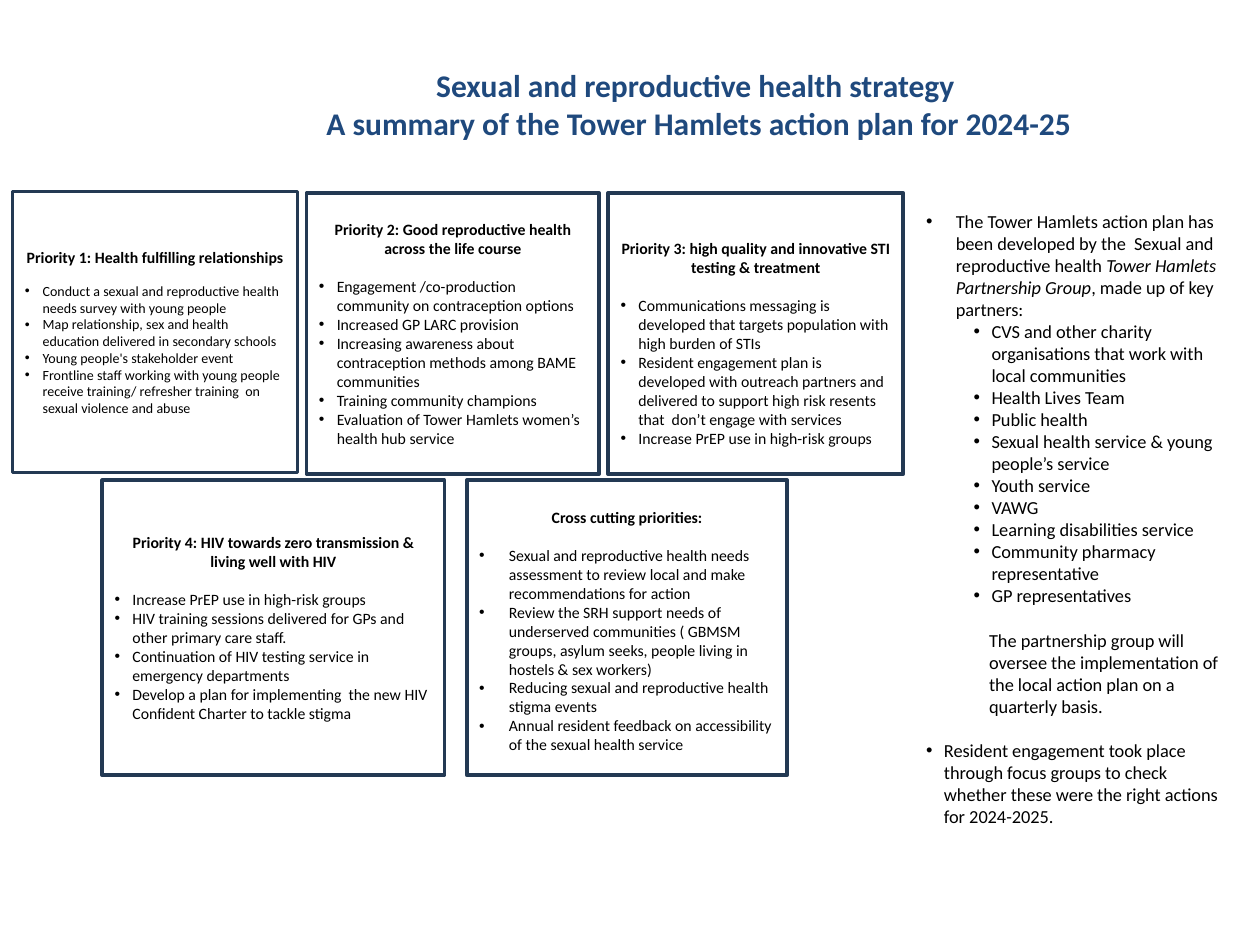
from lxml import etree
from pptx import Presentation
from pptx import util as u
from pptx.dml import color
from pptx.enum import shapes, text
from pptx.oxml import ns

COLORS = {"title": "1F497D", "border": "233953", "text": "000000"}
FONT = "Calibri"
INSET = 0.13

PRIORITIES = [
    dict(box=(0.25, 3.86, 5.75, 5.67), size=8, gap=9,
         heading="Priority 1: Health fulfilling relationships",
         actions=[
             "Conduct a sexual and reproductive health needs survey with young people",
             "Map relationship, sex and health education delivered in secondary schools",
             "Young people's stakeholder event",
             "Frontline staff working with young people receive training/ refresher training  on sexual violence and abuse",
         ]),
    dict(box=(6.18, 3.89, 5.9, 5.67),
         heading="Priority 2: Good reproductive health across the life course",
         actions=[
             "Engagement /co-production community on contraception options",
             "Increased GP LARC provision",
             "Increasing awareness about contraception methods among BAME communities",
             "Training community champions",
             "Evaluation of Tower Hamlets women’s health hub service",
         ]),
    dict(box=(12.26, 3.89, 5.95, 5.67), drop=0.39,
         heading="Priority 3: high quality and innovative STI testing & treatment",
         actions=[
             "Communications messaging is developed that targets population with high burden of STIs",
             "Resident engagement plan is developed with outreach partners and delivered to support high risk resents that  don’t engage with services",
             "Increase PrEP use in high-risk groups",
         ]),
    dict(box=(2.06, 9.68, 6.9, 5.95),
         heading="Priority 4: HIV towards zero transmission & living well with HIV",
         actions=[
             "Increase PrEP use in high-risk groups",
             "HIV training sessions delivered for GPs and other primary care staff.",
             "Continuation of HIV testing service in emergency departments",
             "Develop a plan for implementing  the new HIV Confident Charter to tackle stigma",
         ]),
    dict(box=(9.41, 9.68, 6.46, 5.95), drop=0.12, indent=0.6,
         heading="Cross cutting priorities:",
         actions=[
             "Sexual and reproductive health needs assessment to review local and make recommendations for action",
             "Review the SRH support needs of underserved communities ( GBMSM groups, asylum seeks, people living in hostels & sex workers)",
             "Reducing sexual and reproductive health stigma events",
             "Annual resident feedback on accessibility of the sexual health service",
         ]),
]

PARTNERS = [
    "CVS and other charity organisations that work with local communities",
    "Health Lives Team",
    "Public health",
    "Sexual health service & young people’s service",
    "Youth service",
    "VAWG",
    "Learning disabilities service",
    "Community pharmacy representative",
    "GP representatives",
]


def rgb(name):
    return color.RGBColor.from_string(COLORS[name])


def format_runs(p, size, name="text", bold=False):
    for r in p.runs:
        r.font.name = FONT
        r.font.size = u.Pt(size)
        r.font.bold = bold
        r.font.color.rgb = rgb(name)


def set_indent(p, left, hanging=0.0):
    pPr = p._p.get_or_add_pPr()
    pPr.set("marL", str(u.Cm(left)))
    pPr.set("indent", str(-u.Cm(hanging)))
    if hanging:
        etree.SubElement(pPr, ns.qn("a:buFont")).set("typeface", "Arial")
        etree.SubElement(pPr, ns.qn("a:buChar")).set("char", "•")


def add_paragraph(tf, content, size, left=0.0, hanging=0.0, level=0, before=0):
    p = tf.add_paragraph() if tf.text else tf.paragraphs[0]
    p.text = content
    p.level = level
    p.alignment = text.PP_ALIGN.LEFT
    set_indent(p, left, hanging)
    if before:
        p.space_before = u.Pt(before)
    format_runs(p, size)
    return p


def add_text_box(s, left, top, width, height):
    tf = s.shapes.add_textbox(u.Cm(left), u.Cm(top), u.Cm(width), u.Cm(height)).text_frame
    tf.word_wrap = True
    return tf


def add_title(s):
    tf = add_text_box(s, 5.69, 0.94, 16.81, 2.31)
    tf.vertical_anchor = text.MSO_ANCHOR.MIDDLE
    p = tf.paragraphs[0]
    p.text = "Sexual and reproductive health strategy \vA summary of the Tower Hamlets action plan for 2024-25"
    p.alignment = text.PP_ALIGN.CENTER
    format_runs(p, 18, "title", bold=True)


def add_priority(s, box, heading, actions, size=9, gap=11, indent=0.36, drop=0.0):
    sp = s.shapes.add_shape(shapes.MSO_SHAPE.RECTANGLE, *map(u.Cm, box))
    sp.shadow.inherit = False
    sp.fill.background()
    sp.line.color.rgb = rgb("border")
    sp.line.width = u.Pt(2)
    tf = sp.text_frame
    tf.word_wrap = True
    tf.vertical_anchor = text.MSO_ANCHOR.MIDDLE
    tf.margin_top = u.Cm(INSET + drop)
    tf.margin_bottom = u.Cm(INSET)
    p = tf.paragraphs[0]
    p.text = heading
    p.alignment = text.PP_ALIGN.CENTER
    p.space_after = u.Pt(gap)
    format_runs(p, 9, bold=True)
    for action in actions:
        add_paragraph(tf, action, size, indent, indent)


def add_partnership(s):
    size, gap = 10.5, 12.8
    tf = add_text_box(s, 18.42, 4.11, 6.45, 13.28)
    p = add_paragraph(
        tf, "The Tower Hamlets action plan has been developed by the  Sexual and reproductive health ",
        size, 0.6, 0.6)
    group = p.add_run()
    group.text = "Tower Hamlets Partnership Group"
    group.font.italic = True
    p.add_run().text = ", made up of key partners:"
    format_runs(p, size)
    for partner in PARTNERS:
        add_paragraph(tf, partner, size, 1.32, 0.36, level=1)
    add_paragraph(
        tf, "The partnership group will oversee the implementation of the local action plan on a quarterly basis.",
        size, 1.27, level=1, before=gap)
    add_paragraph(
        tf, "Resident engagement took place through focus groups to check whether these were the right actions for 2024-2025.",
        size, 0.36, 0.36, before=gap)


def main():
    prs = Presentation()
    prs.slide_width, prs.slide_height = u.Cm(25.4), u.Cm(19.05)
    s = prs.slides.add_slide(prs.slide_layouts[6])
    add_title(s)
    for priority in PRIORITIES:
        add_priority(s, **priority)
    add_partnership(s)
    prs.save("out.pptx")


if __name__ == "__main__":
    main()
